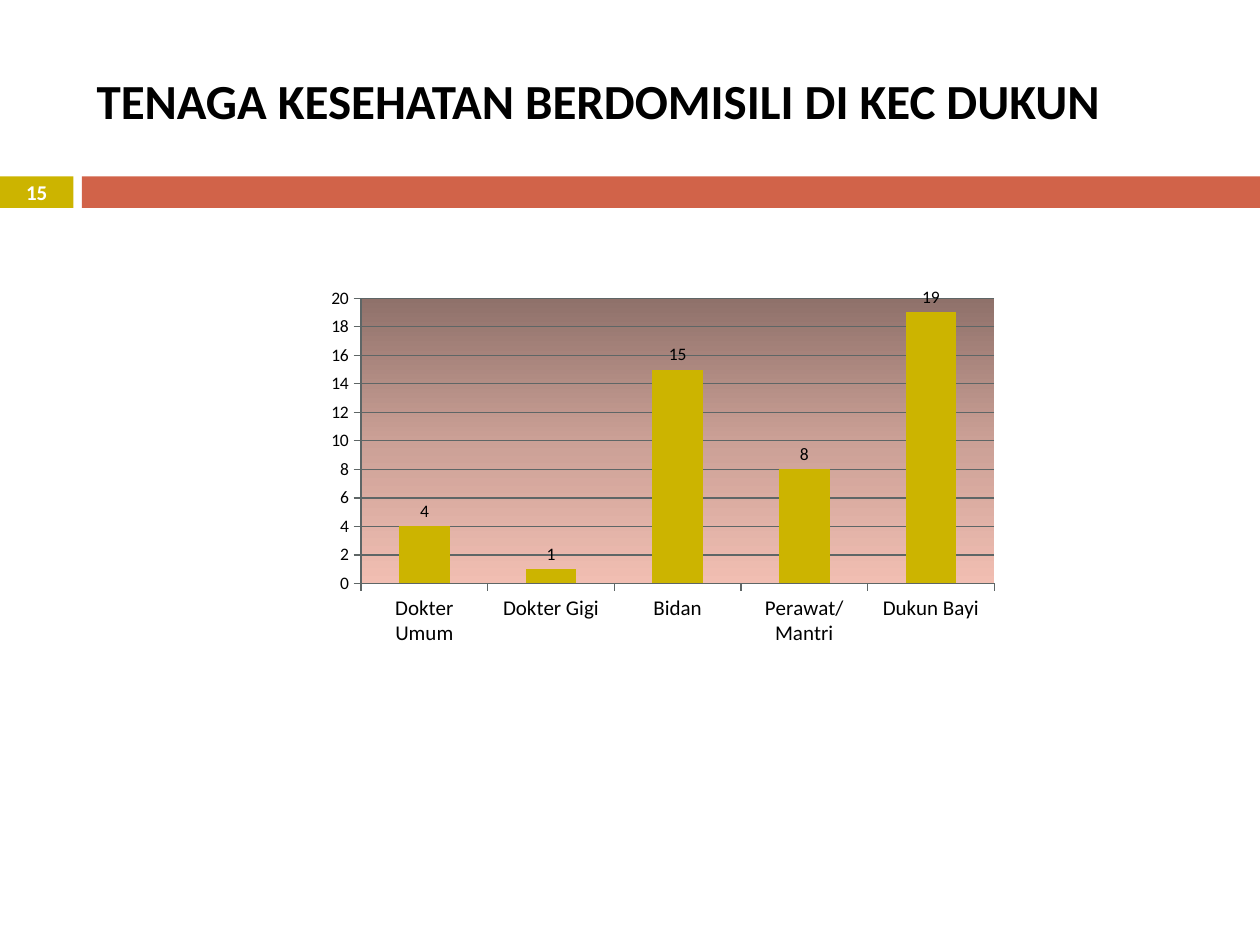
from pptx import Presentation
from pptx.chart.data import CategoryChartData
from pptx.dml.color import RGBColor
from pptx.enum.chart import XL_CHART_TYPE, XL_LABEL_POSITION, XL_TICK_MARK
from pptx.enum.shapes import MSO_SHAPE
from pptx.enum.text import MSO_ANCHOR, PP_ALIGN
from pptx.oxml import parse_xml
from pptx.oxml.ns import nsdecls, qn
from pptx.util import Pt

FONT = "Calibri"
BLACK = RGBColor(0x00, 0x00, 0x00)
WHITE = RGBColor(0xFF, 0xFF, 0xFF)
OLIVE = RGBColor(0xCC, 0xB4, 0x00)
RUST = RGBColor(0xD1, 0x63, 0x49)
GRAY = RGBColor(0x5E, 0x66, 0x66)
PLOT_STOPS = (
    (0, RGBColor(0x8F, 0x71, 0x6A)),
    (50, RGBColor(0xCB, 0xA0, 0x96)),
    (100, RGBColor(0xF1, 0xBE, 0xB2)),
)
PLOT_BOX = {"x": 0.107, "y": 0.071, "w": 0.874, "h": 0.566}
STAFF = {
    "Dokter Umum": 4,
    "Dokter Gigi": 1,
    "Bidan": 15,
    "Perawat/ Mantri": 8,
    "Dukun Bayi": 19,
}


def set_text(sp, text, size, color=BLACK, bold=True, align=PP_ALIGN.LEFT):
    tf = sp.text_frame
    tf.word_wrap = True
    tf.vertical_anchor = MSO_ANCHOR.MIDDLE
    p = tf.paragraphs[0]
    p.alignment = align
    r = p.add_run()
    r.text = text
    r.font.name = FONT
    r.font.size = Pt(size)
    r.font.bold = bold
    r.font.color.rgb = color


def add_bar(s, left, top, width, height, color):
    sp = s.shapes.add_shape(
        MSO_SHAPE.RECTANGLE, Pt(left), Pt(top), Pt(width), Pt(height))
    sp.shadow.inherit = False
    sp.fill.solid()
    sp.fill.fore_color.rgb = color
    sp.line.fill.background()
    return sp


def place_title(s, left, top, width, height):
    sp = s.shapes.title
    sp.left, sp.top, sp.width, sp.height = map(Pt, (left, top, width, height))
    set_text(sp, "TENAGA KESEHATAN BERDOMISILI DI KEC DUKUN", size=28)


def add_band(s, left, top, width, height, number_width=42, gap=4.8):
    number = add_bar(s, left, top, number_width, height, OLIVE)
    tf = number.text_frame
    tf.margin_top = tf.margin_bottom = 0
    set_text(number, "15", size=12, color=WHITE, align=PP_ALIGN.CENTER)
    offset = number_width + gap
    add_bar(s, left + offset, top, width - offset, height, RUST)


def format_plot_area(chart):
    area = chart._chartSpace.chart.plotArea
    for layout in area.findall(qn("c:layout")):
        area.remove(layout)
    sizes = "".join(f'<c:{k} val="{v}"/>' for k, v in PLOT_BOX.items())
    area.insert(0, parse_xml(
        f'<c:layout {nsdecls("c")}><c:manualLayout>'
        '<c:layoutTarget val="inner"/><c:xMode val="edge"/><c:yMode val="edge"/>'
        f'{sizes}</c:manualLayout></c:layout>'))
    stops = "".join(
        f'<a:gs pos="{pos * 1000}"><a:srgbClr val="{color}"/></a:gs>'
        for pos, color in PLOT_STOPS)
    area.append(parse_xml(
        f'<c:spPr {nsdecls("c", "a")}><a:gradFill><a:gsLst>{stops}</a:gsLst>'
        '<a:lin ang="5400000" scaled="0"/></a:gradFill></c:spPr>'))


def format_line(line):
    line.color.rgb = GRAY
    line.width = Pt(0.75)


def add_staff_chart(s, left, top, width, height):
    data = CategoryChartData()
    data.categories = list(STAFF)
    data.add_series("Series 1", list(STAFF.values()))
    chart = s.shapes.add_chart(
        XL_CHART_TYPE.COLUMN_CLUSTERED,
        Pt(left), Pt(top), Pt(width), Pt(height), data).chart
    chart.has_legend = False
    chart.has_title = False
    chart.font.name = FONT
    chart.font.size = Pt(10)
    chart.font.color.rgb = BLACK

    for axis in (chart.category_axis, chart.value_axis):
        axis.major_tick_mark = XL_TICK_MARK.OUTSIDE
        axis.minor_tick_mark = XL_TICK_MARK.NONE
        format_line(axis.format.line)
    chart.category_axis.tick_labels.font.size = Pt(12)
    axis = chart.value_axis
    axis.minimum_scale, axis.maximum_scale, axis.major_unit = 0, 20, 2
    axis.has_major_gridlines = True
    format_line(axis.major_gridlines.format.line)

    plot = chart.plots[0]
    plot.vary_by_categories = False
    plot.gap_width = 150
    plot.has_data_labels = True
    labels = plot.data_labels
    labels.show_value = True
    labels.position = XL_LABEL_POSITION.OUTSIDE_END
    fill = plot.series[0].format.fill
    fill.solid()
    fill.fore_color.rgb = OLIVE
    format_plot_area(chart)


def main():
    prs = Presentation()
    prs.slide_width, prs.slide_height = Pt(720), Pt(540)
    s = prs.slides.add_slide(prs.slide_layouts[5])
    add_band(s, 0, 100.8, 720, 18)
    place_title(s, 48, 18, 642, 78)
    add_staff_chart(s, 162, 150, 414, 288)
    prs.save("out.pptx")


if __name__ == "__main__":
    main()
